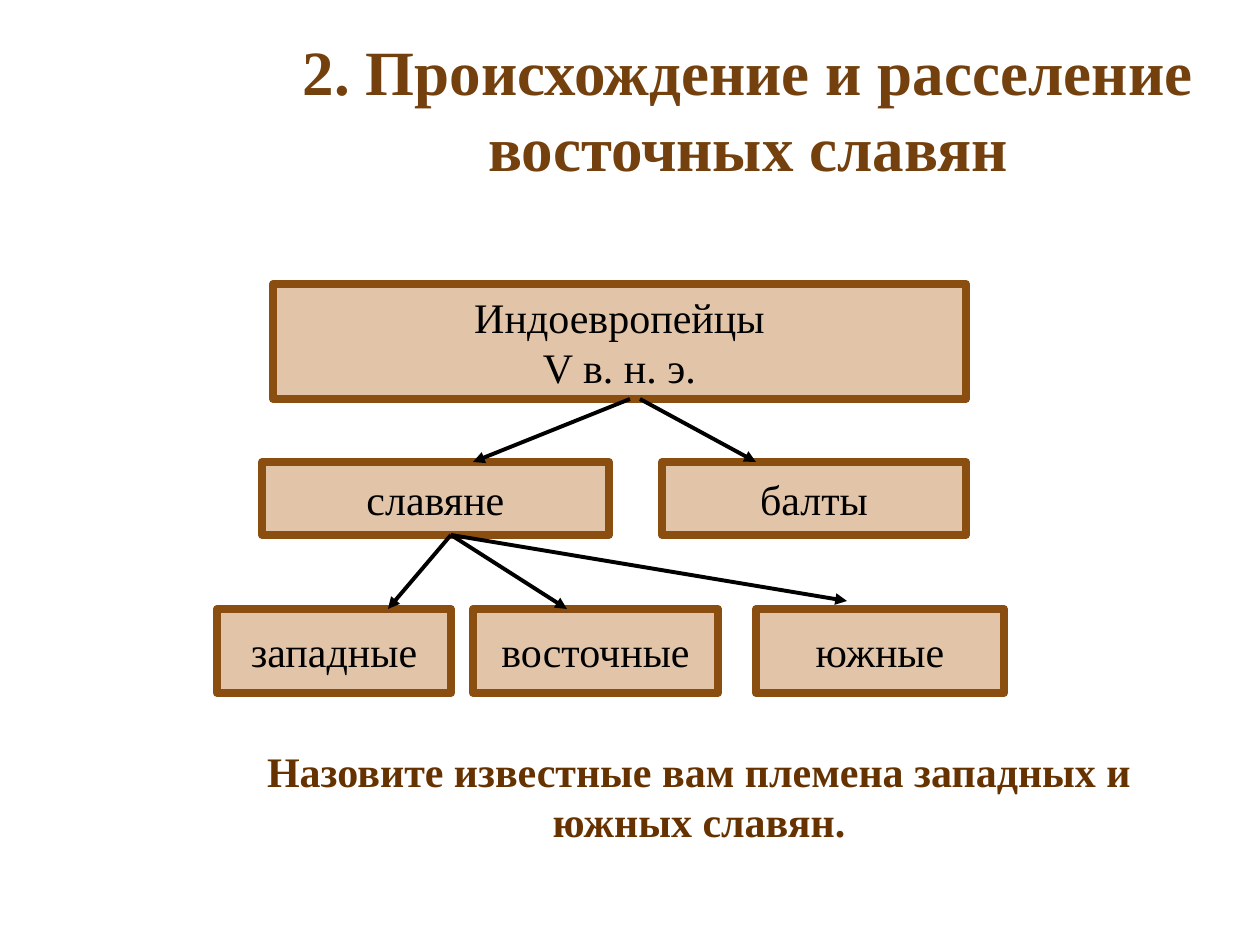
from pptx import Presentation
from pptx.util import Emu, Pt
from pptx.dml.color import RGBColor
from pptx.enum.shapes import MSO_SHAPE, MSO_CONNECTOR
from pptx.enum.text import PP_ALIGN, MSO_ANCHOR
from pptx.oxml.ns import qn
from lxml.etree import SubElement

PX = 914400 // 126
FONT = "Times New Roman"
BLACK = RGBColor(0x00, 0x00, 0x00)
TITLE = RGBColor(0x74, 0x41, 0x0E)
QUESTION = RGBColor(0x66, 0x33, 0x00)
SAND = RGBColor(0xE2, 0xC5, 0xA8)
BROWN = RGBColor(0x8B, 0x4E, 0x11)


def px(*values):
    return [Emu(v * PX) for v in values]


def write(sp, lines, size, color, bold=False, wrap=True):
    tf = sp.text_frame
    tf.word_wrap = wrap
    tf.vertical_anchor = MSO_ANCHOR.MIDDLE
    for i, line in enumerate(lines):
        p = tf.add_paragraph() if i else tf.paragraphs[0]
        p.alignment = PP_ALIGN.CENTER
        r = p.add_run()
        r.text = line
        r.font.name = FONT
        r.font.size = Pt(size)
        r.font.bold = bold
        r.font.color.rgb = color


prs = Presentation()
prs.slide_width, prs.slide_height = px(1260, 945)
s = prs.slides.add_slide(prs.slide_layouts[6])

title = s.shapes.add_textbox(*px(236, 29, 1024, 158))
write(title, ["2. Происхождение и расселение восточных славян"], 36, TITLE, True)

boxes = [
    (273, 284, 693, 115, ["Индоевропейцы", "V в. н. э."]),
    (262, 462, 347, 73, ["славяне"]),
    (662, 462, 304, 73, ["балты"]),
    (217, 609, 234, 84, ["западные"]),
    (473, 609, 245, 84, ["восточные"]),
    (756, 609, 248, 84, ["южные"]),
]
for x, y, w, h, lines in boxes:
    sp = s.shapes.add_shape(MSO_SHAPE.RECTANGLE, *px(x, y, w, h))
    sp.shadow.inherit = False
    sp.fill.solid()
    sp.fill.fore_color.rgb = SAND
    sp.line.color.rgb = BROWN
    sp.line.width = Pt(4.5)
    write(sp, lines, 24, BLACK, wrap=False)

arrows = [
    (630, 399, 473, 462),
    (640, 399, 756, 462),
    (451, 535, 567, 609),
    (451, 535, 388, 609),
    (451, 535, 847, 601),
]
for ends in arrows:
    arrow = s.shapes.add_connector(MSO_CONNECTOR.STRAIGHT, *px(*ends))
    arrow.line.color.rgb = BLACK
    arrow.line.width = Pt(2.25)
    SubElement(arrow.line._get_or_add_ln(), qn("a:tailEnd"), type="triangle")
    SubElement(arrow._element.spPr, qn("a:effectLst"))

question = s.shapes.add_textbox(*px(207, 738, 984, 115))
write(question, ["Назовите известные вам племена западных и южных славян."], 24, QUESTION, True)

prs.save("out.pptx")
